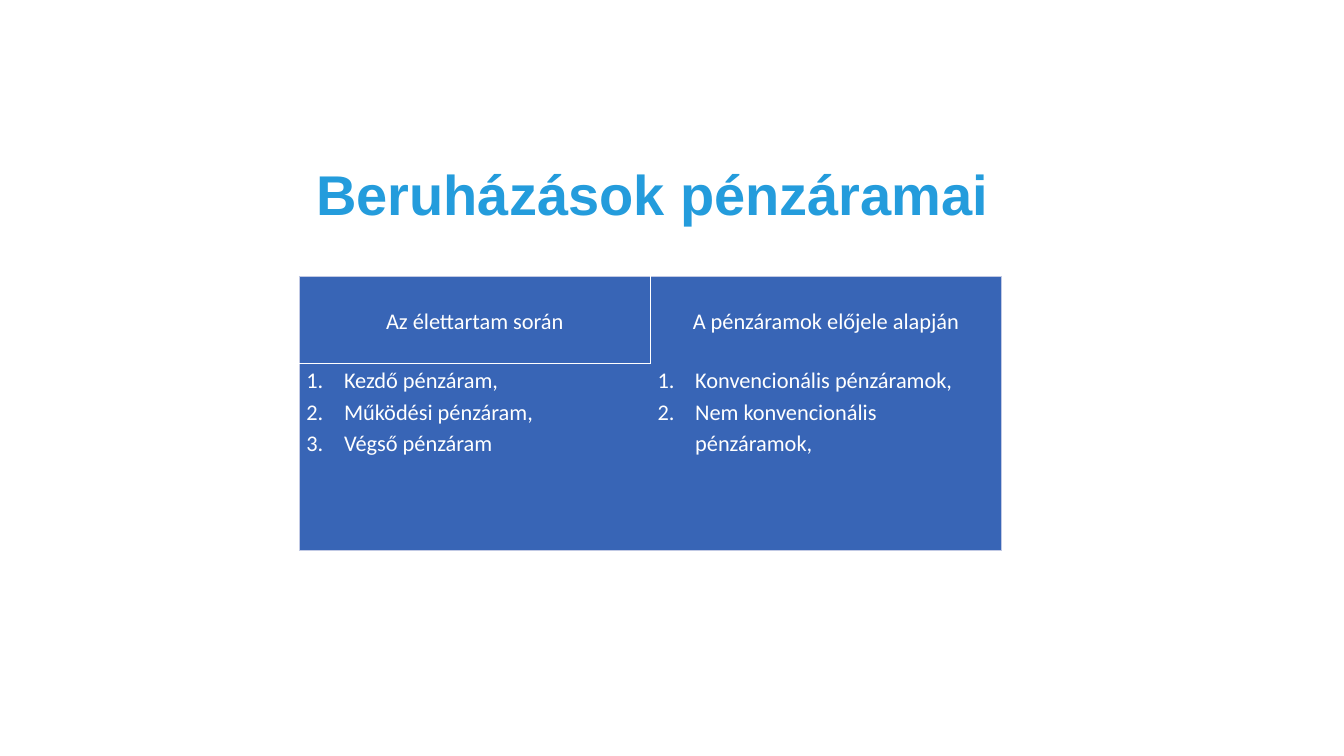
from lxml import etree
from pptx import Presentation
from pptx.dml.color import RGBColor
from pptx.enum.text import MSO_ANCHOR, PP_ALIGN
from pptx.oxml.ns import qn
from pptx.util import Cm, Pt

LEFT, CENTER = PP_ALIGN.LEFT, PP_ALIGN.CENTER
TOP, MIDDLE = MSO_ANCHOR.TOP, MSO_ANCHOR.MIDDLE
OUTER = ("C1C9E4", 0.5)
DIVIDER = ("FFFFFF", 1)
HEADER_RULE = ("FFFFFF", 1.5)


def color(hex_string):
    return RGBColor.from_string(hex_string)


def set_borders(cell, borders):
    properties = cell._tc.get_or_add_tcPr()
    for index, side in enumerate("LRTB"):
        line = etree.Element(qn(f"a:ln{side}"))
        if side in borders:
            hex_string, width = borders[side]
            line.set("w", str(Pt(width)))
            fill = etree.SubElement(line, qn("a:solidFill"))
            etree.SubElement(fill, qn("a:srgbClr"), val=hex_string)
        else:
            etree.SubElement(line, qn("a:noFill"))
        properties.insert(index, line)


presentation = Presentation()
presentation.slide_width, presentation.slide_height = Cm(33.87), Cm(19.05)
slide = presentation.slides.add_slide(presentation.slide_layouts[5])

# Title
title = slide.shapes.title
title.left, title.top, title.width, title.height = Cm(7.72), Cm(3.38), Cm(19.48), Cm(3.18)
title.text_frame.text = "Beruházások pénzáramai"
title.text_frame.vertical_anchor = MIDDLE
paragraph = title.text_frame.paragraphs[0]
paragraph.alignment = LEFT
paragraph.line_spacing = 0.9
paragraph.font.name = "Arial"
paragraph.font.size = Pt(40)
paragraph.font.bold = True
paragraph.font.color.rgb = color("249CDC")

# Table content: header row, then numbered lists
rows = [
    [["Az élettartam során"], ["A pénzáramok előjele alapján"]],
    [
        ["Kezdő pénzáram,", "Működési pénzáram,", "Végső pénzáram"],
        ["Konvencionális pénzáramok,", "Nem konvencionális pénzáramok,"],
    ],
]
borders = [
    [
        {"L": OUTER, "T": OUTER, "R": DIVIDER, "B": HEADER_RULE},
        {"L": DIVIDER, "T": OUTER, "R": OUTER},
    ],
    [
        {"L": OUTER, "T": HEADER_RULE, "B": OUTER},
        {"R": OUTER, "B": OUTER},
    ],
]

# Table
table = slide.shapes.add_table(2, 2, Cm(7.54), Cm(6.96), Cm(17.7), Cm(6.91)).table
table.first_row = False
table.horz_banding = False
table.rows[0].height, table.rows[1].height = Cm(2.2), Cm(4.71)

for row_index, row in enumerate(rows):
    is_header = row_index == 0
    for column_index, lines in enumerate(row):
        cell = table.cell(row_index, column_index)
        cell.fill.solid()
        cell.fill.fore_color.rgb = color("3865B6")
        set_borders(cell, borders[row_index][column_index])
        cell.margin_left = cell.margin_right = Cm(0.18)
        cell.margin_top = cell.margin_bottom = 0
        cell.vertical_anchor = MIDDLE if is_header else TOP
        cell.text_frame.text = "\n".join(lines)
        for paragraph in cell.text_frame.paragraphs:
            if not is_header:
                properties = paragraph._p.get_or_add_pPr()
                properties.set("marL", str(Cm(0.95)))
                properties.set("indent", str(-Cm(0.95)))
                etree.SubElement(properties, qn("a:buFont"), typeface="+mj-lt")
                etree.SubElement(properties, qn("a:buAutoNum"), type="arabicPeriod")
            paragraph.alignment = CENTER if is_header else LEFT
            paragraph.line_spacing = 1.15
            paragraph.font.name = "Calibri"
            paragraph.font.size = Pt(16)
            paragraph.font.color.rgb = color("FFFFFF")

presentation.save("out.pptx")
